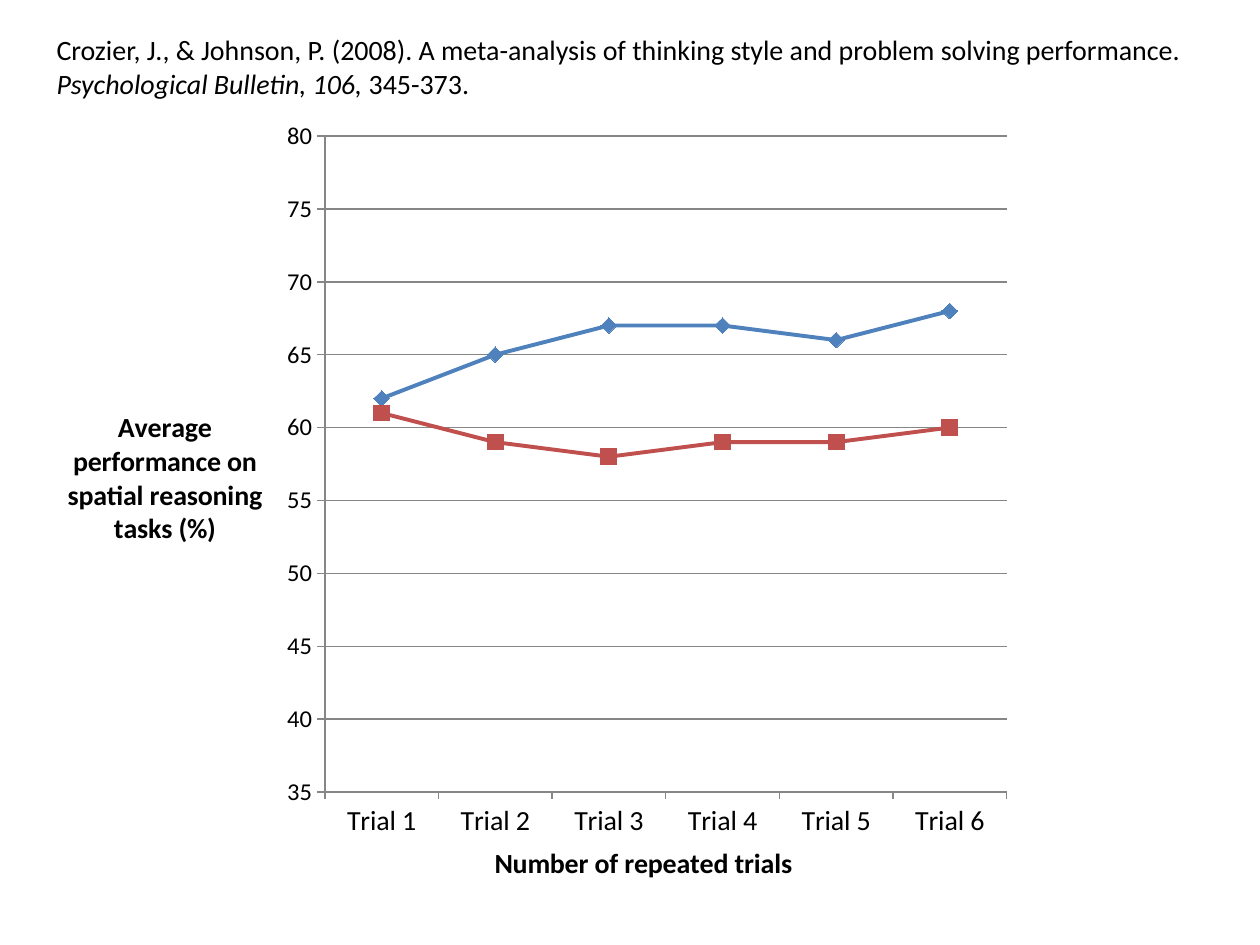
from lxml import etree
from pptx import Presentation
from pptx.chart.data import CategoryChartData
from pptx.dml.color import RGBColor
from pptx.enum.chart import XL_CHART_TYPE, XL_MARKER_STYLE, XL_TICK_MARK
from pptx.enum.text import MSO_AUTO_SIZE
from pptx.oxml.ns import qn
from pptx.util import Cm, Pt

LINE = XL_CHART_TYPE.LINE_MARKERS
DIAMOND = XL_MARKER_STYLE.DIAMOND
SQUARE = XL_MARKER_STYLE.SQUARE
OUTSIDE = XL_TICK_MARK.OUTSIDE
GROW = MSO_AUTO_SIZE.SHAPE_TO_FIT_TEXT
FONT = "Calibri"
BLACK = "000000"
GREY = "868686"
TRIALS = [f"Trial {n}" for n in range(1, 7)]
SERIES = [
    ("Series 1", [62, 65, 67, 67, 66, 68], "4F81BD", DIAMOND),
    ("Series 2", [61, 59, 58, 59, 59, 60], "C0504D", SQUARE),
]
SOURCE = [
    ("Crozier, J., & Johnson, P. (2008). A meta-analysis of thinking style "
     "and problem solving performance. ", False),
    ("Psychological Bulletin, 106, ", True),
    ("345-373.", False),
]


def color(code):
    """Turn a hex string into a colour."""
    return RGBColor.from_string(code)


def style(font, size, bold=False, italic=False):
    """Set the face, size and weight of a font."""
    font.name = FONT
    font.size = Pt(size)
    font.bold = bold
    font.italic = italic
    font.color.rgb = color(BLACK)


def stroke(line, code, width):
    """Set the colour and width of a line."""
    line.color.rgb = color(code)
    line.width = Pt(width)


def place(node, index, modes, **shares):
    """Lay out a chart part at a child index by percent of the chart."""
    for old in node.findall(qn("c:layout")):
        node.remove(old)
    layout = etree.Element(qn("c:layout"))
    manual = etree.SubElement(layout, qn("c:manualLayout"))
    places = {key: share / 100 for key, share in shares.items()}
    for key, value in (modes | places).items():
        etree.SubElement(manual, qn(f"c:{key}")).set("val", f"{value}")
    node.insert(index, layout)


def add_note(slide):
    """Add the citation above the chart."""
    box = slide.shapes.add_textbox(Cm(0.89), Cm(0.53), Cm(24.2), Cm(1.63))
    frame = box.text_frame
    frame.word_wrap = True
    frame.auto_size = GROW
    for text, italic in SOURCE:
        run = frame.paragraphs[0].add_run()
        run.text = text
        style(run.font, 16, italic=italic)


def set_axis(axis, text, size, left, top):
    """Format an axis and place its level title."""
    axis.major_tick_mark = OUTSIDE
    style(axis.tick_labels.font, size)
    stroke(axis.format.line, GREY, 0.75)
    title = axis.axis_title
    frame = title.text_frame
    frame.text = text
    style(frame.paragraphs[0].runs[0].font, 16, bold=True)
    body = title._element.find(".//" + qn("a:bodyPr"))
    body.set("rot", "0")
    body.set("vert", "horz")
    modes = {"xMode": "edge", "yMode": "edge"}
    place(title._element, 1, modes, x=left, y=top)


def set_line(series, code, mark):
    """Format one series and its markers."""
    series.smooth = False
    stroke(series.format.line, code, 2.25)
    marker = series.marker
    marker.style = mark
    marker.size = 9
    marker.format.fill.solid()
    marker.format.fill.fore_color.rgb = color(code)
    stroke(marker.format.line, code, 0.75)


def add_graph(slide):
    """Add the line chart of performance by trial."""
    data = CategoryChartData()
    data.categories = TRIALS
    for name, values, *_ in SERIES:
        data.add_series(name, values)
    shape = slide.shapes.add_chart(
        LINE, Cm(1.09), Cm(1.32), Cm(21.41), Cm(16.61), data)
    chart = shape.chart
    chart.has_title = False
    chart.has_legend = False
    style(chart.font, 10)
    plot = chart.plots[0]
    plot.vary_by_categories = False
    for series, (_, _, code, mark) in zip(plot.series, SERIES):
        set_line(series, code, mark)
    set_axis(chart.category_axis, "Number of repeated trials ", 16, 41, 95.2)
    scale = chart.value_axis
    set_axis(scale, "Average performance on spatial reasoning tasks (%)",
             14, 0.8, 41.6)
    scale.minimum_scale = 35
    scale.maximum_scale = 80
    scale.major_unit = 5
    scale.has_major_gridlines = True
    stroke(scale.major_gridlines.format.line, GREY, 0.75)
    area = chart._chartSpace.find(".//" + qn("c:plotArea"))
    modes = {"layoutTarget": "inner", "xMode": "edge", "yMode": "edge"}
    place(area, 0, modes, x=25.5, y=8.7, w=64.2, h=80.7)


def main():
    """Build and save the slide."""
    deck = Presentation()
    deck.slide_width = Cm(25.4)
    deck.slide_height = Cm(19.05)
    slide = deck.slides.add_slide(deck.slide_layouts[6])
    add_graph(slide)
    add_note(slide)
    deck.save("out.pptx")


if __name__ == "__main__":
    main()
